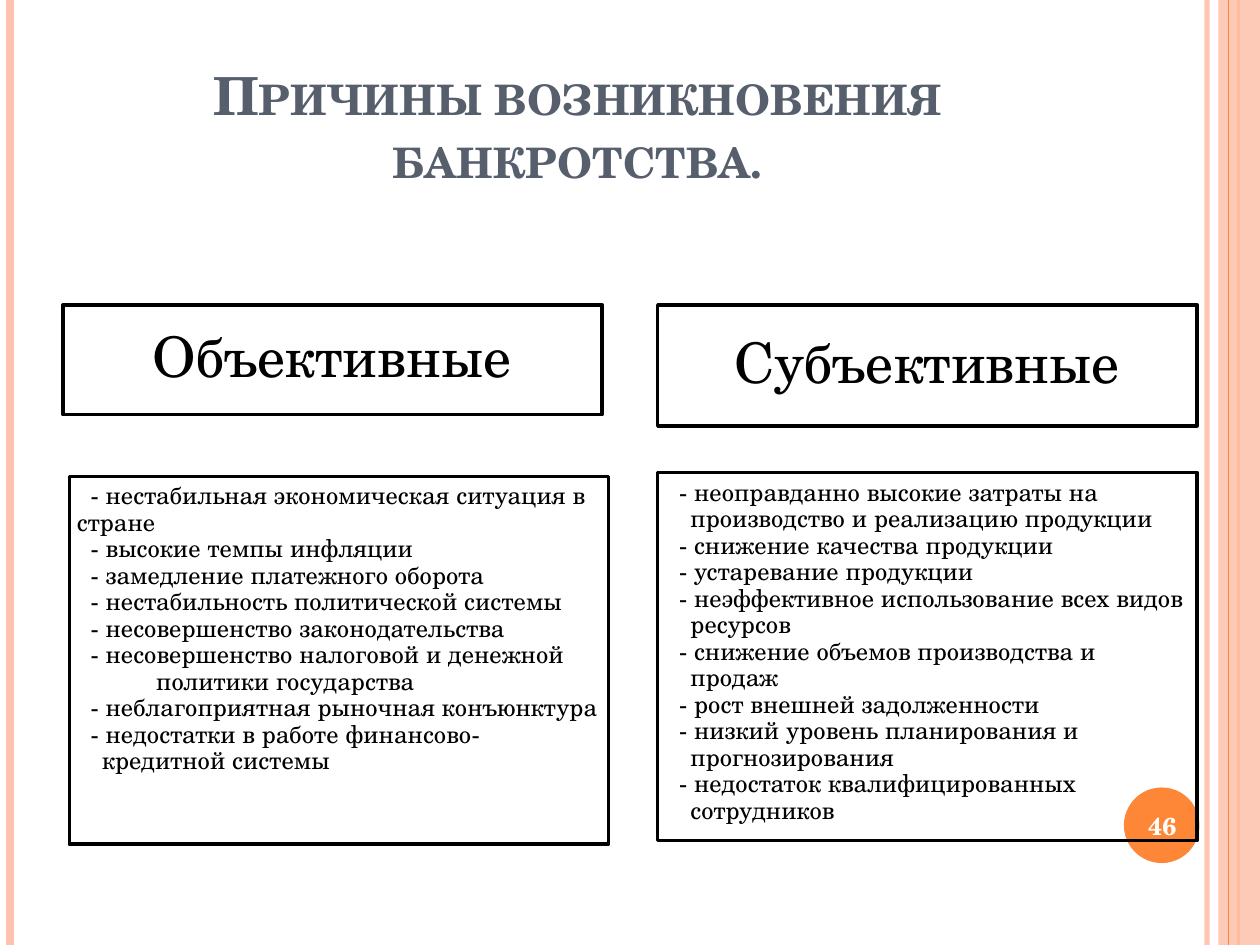
from lxml import etree
from pptx import Presentation
from pptx.dml.color import RGBColor
from pptx.enum import shapes, text
from pptx.oxml import ns
from pptx.util import Inches, Pt

FONT = "TeX Gyre Schola"
BLACK = RGBColor(0x00, 0x00, 0x00)
WHITE = RGBColor(0xFF, 0xFF, 0xFF)
SLATE = RGBColor(0x57, 0x5F, 0x6D)
PEACH = RGBColor(0xFE, 0xC3, 0xAE)
ORANGE = RGBColor(0xFE, 0x86, 0x37)

WIDE, TALL = 10, 7.5
FIRST = 0.11
STRIPES = [
    (9.58, PEACH, 3, 93),
    (0.08, PEACH, 4.5, 100),
    (9.83, ORANGE, 1.5, 100),
    (9.75, ORANGE, 0.75, 100),
]
OUTER = [
    ("- нестабильная экономическая ситуация в стране", 0),
    ("- высокие темпы инфляции", 0),
    ("- замедление платежного оборота", 0),
    ("- нестабильность политической системы", 0),
    ("- несовершенство законодательства", 0),
    ("- несовершенство налоговой и денежной политики государства", 0.63),
    ("- неблагоприятная рыночная конъюнктура", 0.2),
    ("- недостатки в работе финансово-кредитной системы", 0.2),
]
INNER = [(line, 0.2) for line in (
    "- неоправданно высокие затраты на производство и реализацию продукции",
    "- снижение качества продукции",
    "- устаревание продукции",
    "- неэффективное использование всех видов ресурсов",
    "- снижение объемов производства и продаж",
    "- рост внешней задолженности",
    "- низкий уровень планирования и прогнозирования",
    "- недостаток квалифицированных сотрудников",
)]


def style(para, size, color, bold=False):
    for run in para.runs:
        font = run.font
        font.name, font.size, font.bold = FONT, Pt(size), bold
        font.color.rgb = color


def fade(fill, share):
    if share < 100:
        tone = fill.find(".//" + ns.qn("a:srgbClr"))
        etree.SubElement(tone, ns.qn("a:alpha"), val=str(share * 1000))


def inset(frame, gap):
    frame.margin_left = frame.margin_right = Inches(gap)
    frame.margin_top = frame.margin_bottom = Inches(gap)
    frame.word_wrap = True


def add_block(slide, kind, box, fill=None):
    block = slide.shapes.add_shape(kind, *map(Inches, box))
    block.shadow.inherit = False
    if fill is None:
        block.fill.background()
        block.line.color.rgb = BLACK
        block.line.width = Pt(2)
    else:
        block.fill.solid()
        block.fill.fore_color.rgb = fill
        block.line.fill.background()
    return block


def add_stripe(slide, left, color, width, share):
    stripe = slide.shapes.add_connector(
        shapes.MSO_CONNECTOR.STRAIGHT,
        Inches(left), 0, Inches(left), Inches(TALL))
    stripe.line.color.rgb = color
    stripe.line.width = Pt(width)
    props = stripe._element.spPr
    fade(props.find(ns.qn("a:ln")), share)
    etree.SubElement(props, ns.qn("a:effectLst"))


def add_frame(slide):
    for stripe in STRIPES[:3]:
        add_stripe(slide, *stripe)
    band = add_block(slide, shapes.MSO_SHAPE.RECTANGLE,
                     (9.67, 0, WIDE - 9.67, TALL), PEACH)
    fade(band._element.spPr.find(ns.qn("a:solidFill")), 87)
    add_stripe(slide, *STRIPES[3])


def set_title(slide, box, words):
    title = slide.shapes.title
    title.left, title.top, title.width, title.height = map(Inches, box)
    frame = title.text_frame
    frame.text = words
    frame.word_wrap = True
    frame.vertical_anchor = text.MSO_ANCHOR.BOTTOM
    para = frame.paragraphs[0]
    para.alignment = text.PP_ALIGN.CENTER
    style(para, 30, SLATE, True)
    para.runs[0].font._element.set("cap", "small")


def add_head(slide, box, words):
    frame = add_block(slide, shapes.MSO_SHAPE.RECTANGLE, box).text_frame
    inset(frame, 0.13)
    frame.vertical_anchor = text.MSO_ANCHOR.MIDDLE
    frame.text = words
    para = frame.paragraphs[0]
    para.alignment = text.PP_ALIGN.CENTER
    para.line_spacing = 0.9
    style(para, 32, BLACK)


def add_list(slide, box, items):
    frame = add_block(slide, shapes.MSO_SHAPE.RECTANGLE, box).text_frame
    inset(frame, 0.06)
    frame.vertical_anchor = text.MSO_ANCHOR.TOP
    frame.text = "\n".join(words for words, hang in items)
    for para, (words, hang) in zip(frame.paragraphs, items):
        para.alignment = text.PP_ALIGN.LEFT
        para.line_spacing = 0.9
        props = para._p.get_or_add_pPr()
        props.set("marL", str(Inches(hang)))
        props.set("indent", str(Inches(FIRST - hang)))
        style(para, 14, BLACK)


def add_number(slide, box, words):
    label = slide.shapes.add_textbox(*map(Inches, box))
    frame = label.text_frame
    frame.word_wrap = True
    frame.vertical_anchor = text.MSO_ANCHOR.MIDDLE
    frame.text = words
    para = frame.paragraphs[0]
    para.alignment = text.PP_ALIGN.CENTER
    style(para, 14, WHITE, True)


def main():
    deck = Presentation()
    deck.slide_width, deck.slide_height = Inches(WIDE), Inches(TALL)
    slide = deck.slides.add_slide(deck.slide_layouts[5])
    add_frame(slide)
    add_block(slide, shapes.MSO_SHAPE.OVAL, (8.92, 6.25, 0.6, 0.6), ORANGE)
    set_title(slide, (0.5, 0.3, 8.17, 1.25),
              "Причины возникновения банкротства.")
    add_head(slide, (0.5, 2.42, 4.28, 0.87), "Объективные")
    add_head(slide, (5.22, 2.42, 4.28, 0.96), "Субъективные")
    add_list(slide, (0.55, 3.78, 4.28, 2.92), OUTER)
    add_list(slide, (5.22, 3.75, 4.28, 2.92), INNER)
    add_number(slide, (8.89, 6.27, 0.67, 0.57), "46")
    deck.save("out.pptx")


if __name__ == "__main__":
    main()
